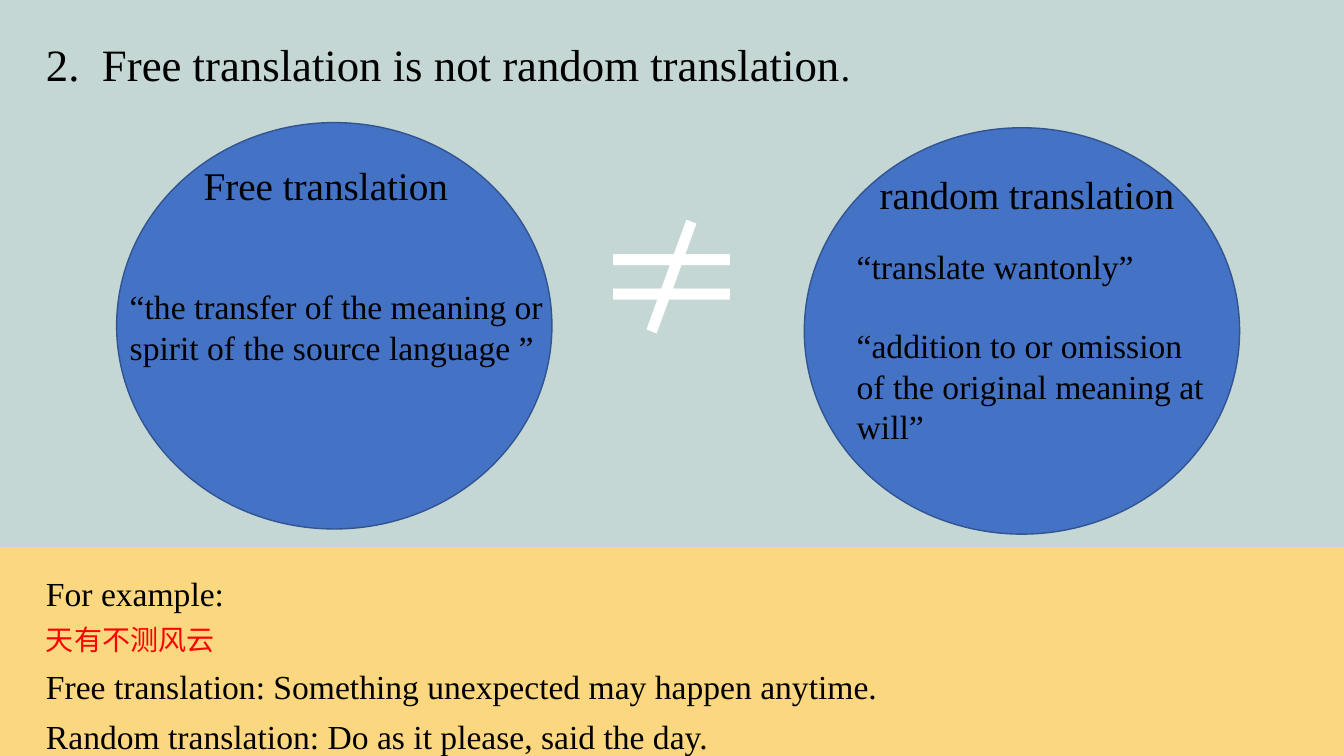
from pptx import Presentation
from pptx.dml.color import RGBColor
from pptx.enum.shapes import MSO_SHAPE
from pptx.enum.text import MSO_ANCHOR, PP_ALIGN
from pptx.oxml.ns import qn
from pptx.util import Cm, Pt
from lxml.etree import SubElement

COLORS = {"sage": "C4D7D5", "sand": "FBD77F", "blue": "4472C4",
          "outline": "325491", "black": "000000", "red": "FF0000",
          "white": "FFFFFF"}
SERIF = "Times New Roman"
CHINESE = "Noto Sans CJK SC"
SLIDE_WIDTH = 33.87
CIRCLE_SIZE = (10.97, 10.24)


def rgb(name):
    return RGBColor.from_string(COLORS[name])


def style(paragraph, size, color="black", face=SERIF):
    font = paragraph.font
    font.color.rgb = rgb(color)
    font.name = face
    if size:
        font.size = Pt(size)
    if face == CHINESE:
        properties = paragraph._p.pPr.find(qn("a:defRPr"))
        SubElement(properties, qn("a:ea")).set("typeface", face)


def add_filled(slide, kind, left, top, width, height, fill, outline=None):
    shape = slide.shapes.add_shape(kind, Cm(left), Cm(top), Cm(width), Cm(height))
    shape.shadow.inherit = False
    shape.fill.solid()
    shape.fill.fore_color.rgb = rgb(fill)
    if outline:
        shape.line.color.rgb = rgb(outline)
        shape.line.width = Pt(1)
    else:
        shape.line.fill.background()
    return shape


def add_frame(slide, left, top, width, height):
    frame = slide.shapes.add_textbox(Cm(left), Cm(top), Cm(width), Cm(height)).text_frame
    frame.word_wrap = True
    return frame


def add_lines(frame, lines, spacing=None, gap=0):
    """Each line is (text, size) or (text, size, color, face)."""
    for index, (text, *look) in enumerate(lines):
        paragraph = frame.add_paragraph() if index else frame.paragraphs[0]
        paragraph.text = text
        if spacing:
            paragraph.line_spacing = spacing
        if index and gap:
            paragraph.space_before = Pt(gap)
        style(paragraph, *look)


def add_title(slide):
    paragraph = add_frame(slide, 0.91, 0.79, 25.22, 2.82).paragraphs[0]
    tabs = SubElement(paragraph._p.get_or_add_pPr(), qn("a:tabLst"))
    tab = SubElement(tabs, qn("a:tab"))
    tab.set("pos", str(Cm(1.41)))
    tab.set("algn", "l")
    for text, size in (("2.\tFree translation is not random translation", 32), (".", 28)):
        run = paragraph.add_run()
        run.text = text
        run.font.size = Pt(size)
    style(paragraph, None)


def add_concept(slide, circle_at, heading, heading_at, meanings, meanings_box):
    add_filled(slide, MSO_SHAPE.OVAL, *circle_at, *CIRCLE_SIZE, "blue", "outline")
    add_lines(add_frame(slide, *heading_at, 8.23, 2.64), [(heading, 28)])
    add_lines(add_frame(slide, *meanings_box), [(text, 24) for text in meanings], gap=28)


def main():
    prs = Presentation()
    prs.slide_width, prs.slide_height = Cm(SLIDE_WIDTH), Cm(19.05)
    slide = prs.slides.add_slide(prs.slide_layouts[6])

    # Background bands, with the inequality sign in the upper one
    comparison = add_filled(slide, MSO_SHAPE.RECTANGLE, 0, 0, SLIDE_WIDTH, 13.79, "sage")
    comparison.text_frame.vertical_anchor = MSO_ANCHOR.MIDDLE
    add_lines(comparison.text_frame, [("≠", 115, "white", CHINESE)])
    comparison.text_frame.paragraphs[0].alignment = PP_ALIGN.CENTER
    add_filled(slide, MSO_SHAPE.RECTANGLE, 0, 13.79, SLIDE_WIDTH, 5.26, "sand")

    add_title(slide)

    # The two concepts compared
    add_concept(slide, (2.94, 3.09), "Free translation", (4.88, 3.94),
                ["“the transfer of the meaning or spirit of the source language ”"],
                (3.02, 7.09, 11.94, 4.37))
    add_concept(slide, (20.27, 3.22), "random translation", (21.92, 4.17),
                ["“translate wantonly”",
                 "“addition to or omission of the original meaning at will”"],
                (21.34, 6.07, 9.42, 5.38))

    # Example
    example = add_frame(slide, 0.91, 14.07, 27.97, 6.2)
    add_lines(example, [
        ("For example:", 24),
        ("天有不测风云", 20, "red", CHINESE),
        ("Free translation: Something unexpected may happen anytime.", 24),
        ("Random translation: Do as it please, said the day.", 24),
    ], spacing=1.25)

    prs.save("out.pptx")


if __name__ == "__main__":
    main()
